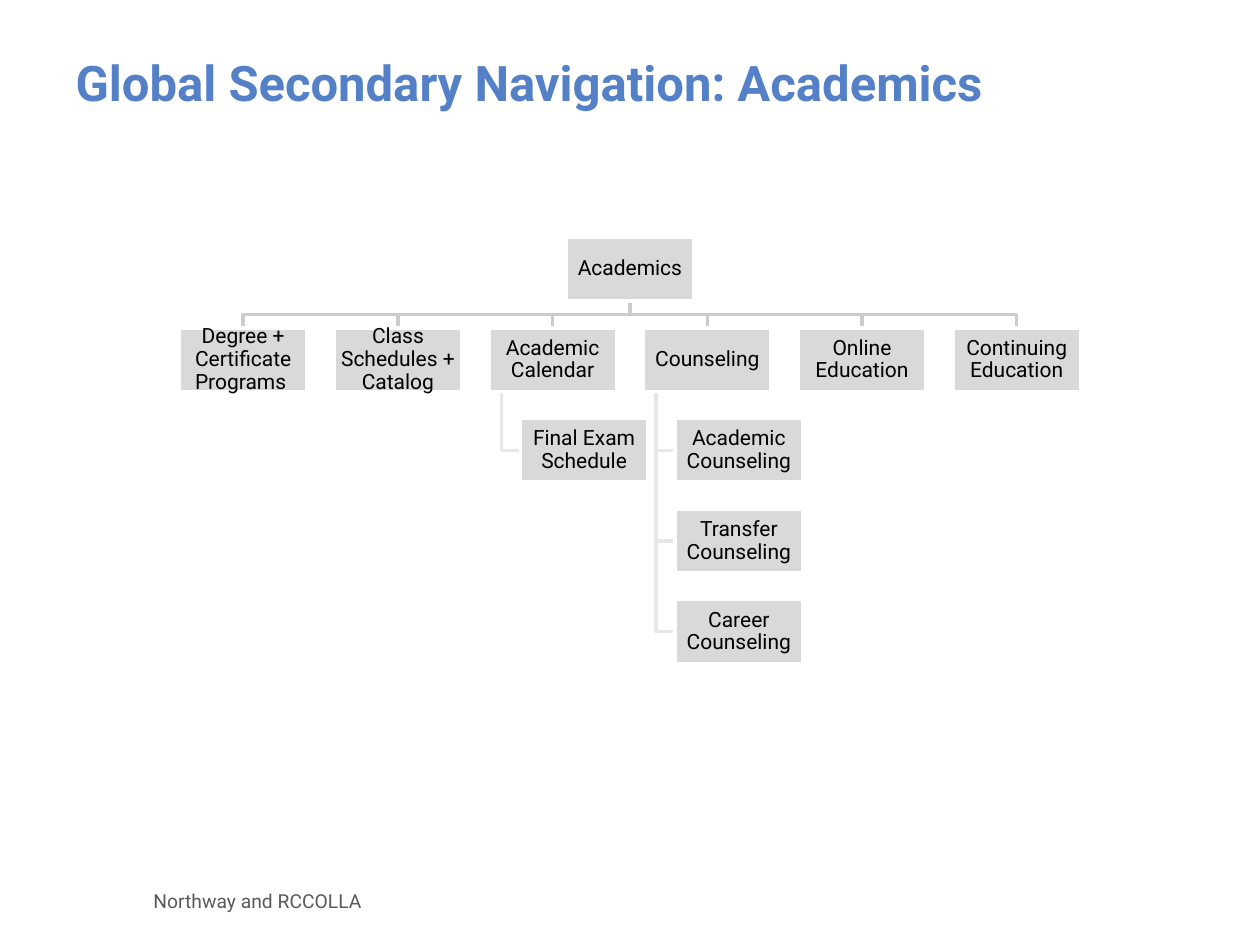
from pptx import Presentation
from pptx.dml.color import RGBColor
from pptx.enum.shapes import MSO_SHAPE
from pptx.enum.text import MSO_ANCHOR, MSO_AUTO_SIZE, PP_ALIGN
from pptx.util import Pt

BOX_WIDTH, BOX_HEIGHT = 73, 36.5
COLUMN_PITCH, ROW_PITCH = 88.4, 51.8
CENTER, ROOT_TOP = 360, 135.5
CHILD_INDENT, TRUNK_INDENT = 18, 7.3
BRANCHES = {
    "Degree + Certificate Programs ": [],
    "Class Schedules + Catalog": [],
    "Academic Calendar": ["Final Exam Schedule"],
    "Counseling": ["Academic Counseling", "Transfer Counseling", "Career Counseling"],
    "Online Education": [],
    "Continuing Education": [],
}


def color(value):
    return RGBColor.from_string(value)


def apply_format(target, values):
    for name, value in values.items():
        setattr(target, name, value)


def write_text(shape, text, size, text_color, bold=False, paragraph_format=None, inset=None):
    frame = shape.text_frame
    frame.text = text
    apply_format(frame, {
        "word_wrap": True,
        "auto_size": MSO_AUTO_SIZE.NONE,
        "vertical_anchor": MSO_ANCHOR.MIDDLE,
    })
    if inset is not None:
        sides = ("left", "top", "right", "bottom")
        apply_format(frame, {f"margin_{side}": Pt(inset) for side in sides})
    paragraph = frame.paragraphs[0]
    apply_format(paragraph, paragraph_format or {"alignment": PP_ALIGN.LEFT})
    font = paragraph.runs[0].font
    apply_format(font, {"name": "Roboto", "size": Pt(size), "bold": bold})
    font.color.rgb = color(text_color)


def add_title(slide, text):
    title = slide.shapes.title
    apply_format(title, {"left": Pt(36), "top": Pt(21.6), "width": Pt(648), "height": Pt(51)})
    write_text(title, text, 28, "5480C7", bold=True)


def add_footer(slide, text):
    footer = slide.shapes.add_textbox(Pt(80.6), Pt(500.4), Pt(353), Pt(28.8))
    write_text(footer, text, 11, "595959")


def add_box(slide, text, left, top):
    box = slide.shapes.add_shape(
        MSO_SHAPE.RECTANGLE, Pt(left), Pt(top), Pt(BOX_WIDTH), Pt(BOX_HEIGHT))
    box.shadow.inherit = False
    box.fill.solid()
    box.fill.fore_color.rgb = color("D9D9D9")
    box.line.color.rgb = color("FFFFFF")
    box.line.width = Pt(2)
    centered = {"alignment": PP_ALIGN.CENTER, "line_spacing": 0.9, "space_after": Pt(4.2)}
    write_text(box, text, 12, "000000", paragraph_format=centered, inset=0.6)


def add_elbow(slide, points, line_color):
    start, *rest = [(Pt(x), Pt(y)) for x, y in points]
    builder = slide.shapes.build_freeform(*start)
    builder.add_line_segments(rest, close=False)
    elbow = builder.convert_to_shape()
    elbow.shadow.inherit = False
    elbow.fill.background()
    elbow.line.color.rgb = color(line_color)
    elbow.line.width = Pt(2)


def add_tree(slide, root, branches):
    boxes = [(root, CENTER - BOX_WIDTH / 2, ROOT_TOP)]
    branch_top = ROOT_TOP + ROW_PITCH
    root_bottom = ROOT_TOP + BOX_HEIGHT
    middle = (root_bottom + branch_top) / 2
    for column, (branch, children) in enumerate(branches.items()):
        branch_center = CENTER + (column - (len(branches) - 1) / 2) * COLUMN_PITCH
        left = branch_center - BOX_WIDTH / 2
        boxes.append((branch, left, branch_top))
        add_elbow(slide, [(CENTER, root_bottom), (CENTER, middle),
                          (branch_center, middle), (branch_center, branch_top)], "CCCCCC")
        trunk = left + TRUNK_INDENT
        child_left = left + CHILD_INDENT
        for row, child in enumerate(children, start=1):
            child_top = branch_top + row * ROW_PITCH
            child_middle = child_top + BOX_HEIGHT / 2
            boxes.append((child, child_left, child_top))
            add_elbow(slide, [(trunk, branch_top + BOX_HEIGHT), (trunk, child_middle),
                              (child_left, child_middle)], "E7E7E7")
    for box in boxes:
        add_box(slide, *box)


def main():
    presentation = Presentation()
    apply_format(presentation, {"slide_width": Pt(720), "slide_height": Pt(540)})
    slide = presentation.slides.add_slide(presentation.slide_layouts[5])
    add_title(slide, "Global Secondary Navigation: Academics")
    add_tree(slide, "Academics", BRANCHES)
    add_footer(slide, "Northway and RCCOLLA")
    presentation.save("out.pptx")


if __name__ == "__main__":
    main()
